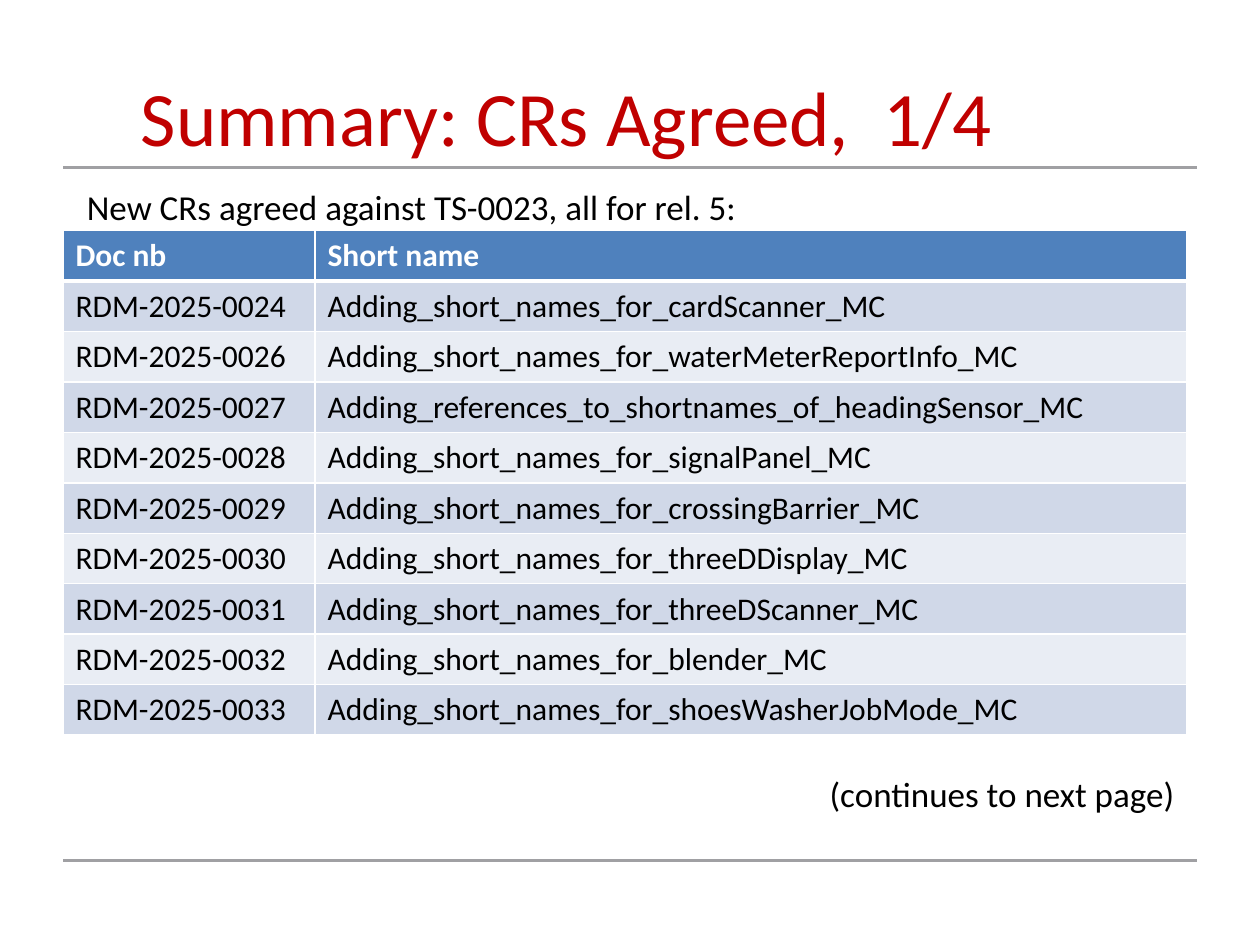
from lxml import etree
from pptx import Presentation
from pptx.dml.color import RGBColor
from pptx.enum.shapes import MSO_CONNECTOR
from pptx.enum.text import MSO_ANCHOR, PP_ALIGN
from pptx.oxml.ns import qn
from pptx.util import Inches, Pt

LEFT, CENTER, RIGHT = PP_ALIGN.LEFT, PP_ALIGN.CENTER, PP_ALIGN.RIGHT
TOP = MSO_ANCHOR.TOP
STRAIGHT = MSO_CONNECTOR.STRAIGHT

RED = RGBColor(0xC0, 0x00, 0x00)
BLACK = RGBColor(0x00, 0x00, 0x00)
WHITE = RGBColor(0xFF, 0xFF, 0xFF)
GRAY = RGBColor(0xA0, 0xA0, 0xA3)
HEADER_BLUE = RGBColor(0x4F, 0x81, 0xBD)
BANDS = (RGBColor(0xD0, 0xD8, 0xE8), RGBColor(0xE9, 0xED, 0xF4))

HEADER = ("Doc nb", "Short name")
CHANGE_REQUESTS = [
    ("RDM-2025-0024", "Adding_short_names_for_cardScanner_MC"),
    ("RDM-2025-0026", "Adding_short_names_for_waterMeterReportInfo_MC"),
    ("RDM-2025-0027", "Adding_references_to_shortnames_of_headingSensor_MC"),
    ("RDM-2025-0028", "Adding_short_names_for_signalPanel_MC"),
    ("RDM-2025-0029", "Adding_short_names_for_crossingBarrier_MC"),
    ("RDM-2025-0030", "Adding_short_names_for_threeDDisplay_MC"),
    ("RDM-2025-0031", "Adding_short_names_for_threeDScanner_MC"),
    ("RDM-2025-0032", "Adding_short_names_for_blender_MC"),
    ("RDM-2025-0033", "Adding_short_names_for_shoesWasherJobMode_MC"),
]


def write(tf, text, size=20, color=BLACK, bold=False, align=LEFT, font="Calibri"):
    p = tf.paragraphs[0]
    p.alignment = align
    r = p.add_run()
    r.text = text
    r.font.name = font
    r.font.size = Pt(size)
    r.font.bold = bold
    r.font.color.rgb = color


def set_borders(cell, color, bottom=1):
    """Draw 1 pt borders around a cell, with its own width at the bottom."""
    tc_pr = cell._tc.get_or_add_tcPr()
    widths = {"a:lnL": 1, "a:lnR": 1, "a:lnT": 1, "a:lnB": bottom}
    for i, (tag, width) in enumerate(widths.items()):
        ln = etree.Element(qn(tag), w=str(Pt(width)))
        fill = etree.SubElement(ln, qn("a:solidFill"))
        etree.SubElement(fill, qn("a:srgbClr"), val=str(color))
        tc_pr.insert(i, ln)


class SlideBuilder:
    def __init__(self, slide):
        self.slide = slide

    def rule(self, y, left=0.5, right=9.5):
        line = self.slide.shapes.add_connector(
            STRAIGHT, Inches(left), Inches(y), Inches(right), Inches(y))
        line.line.color.rgb = GRAY
        line.line.width = Pt(1.75)
        etree.SubElement(line._element.spPr, qn("a:effectLst"))

    def text(self, text, left, top, width, height, indent=0, **style):
        sp = self.slide.shapes.add_textbox(
            Inches(left), Inches(top), Inches(width), Inches(height))
        tf = sp.text_frame
        tf.word_wrap = True
        tf.vertical_anchor = TOP
        tf.margin_left = Inches(0.1 + indent)
        write(tf, text, **style)

    def table(self, rows, left, top, widths, row_height):
        table = self.slide.shapes.add_table(
            len(rows), len(widths), Inches(left), Inches(top),
            Inches(sum(widths)), Inches(row_height * len(rows))).table
        for column, width in zip(table.columns, widths):
            column.width = Inches(width)
        for i, row in enumerate(rows):
            header = i == 0
            for j, text in enumerate(row):
                cell = table.cell(i, j)
                cell.fill.solid()
                cell.fill.fore_color.rgb = HEADER_BLUE if header else BANDS[(i - 1) % 2]
                set_borders(cell, WHITE, bottom=3 if header else 1)
                write(cell.text_frame, text, size=18, bold=header,
                      color=WHITE if header else BLACK)


def main():
    prs = Presentation()
    prs.slide_width, prs.slide_height = Inches(10), Inches(7.5)
    s = SlideBuilder(prs.slides.add_slide(prs.slide_layouts[6]))

    for y in (6.83, 1.33):
        s.rule(y)
    s.text("Summary: CRs Agreed,  1/4", 0, 0.5, 9, 1.25,
           size=44, color=RED, align=CENTER)
    s.text("New CRs agreed against TS-0023, all for rel. 5:",
           0.5, 1.42, 8.5, 0.5, indent=0.09)
    s.table([HEADER] + CHANGE_REQUESTS, 0.5, 1.83, (2, 6.92), 0.4)
    s.text("(continues to next page)", 0.75, 6.08, 8.67, 0.5, align=RIGHT)

    prs.save("out.pptx")


if __name__ == "__main__":
    main()
